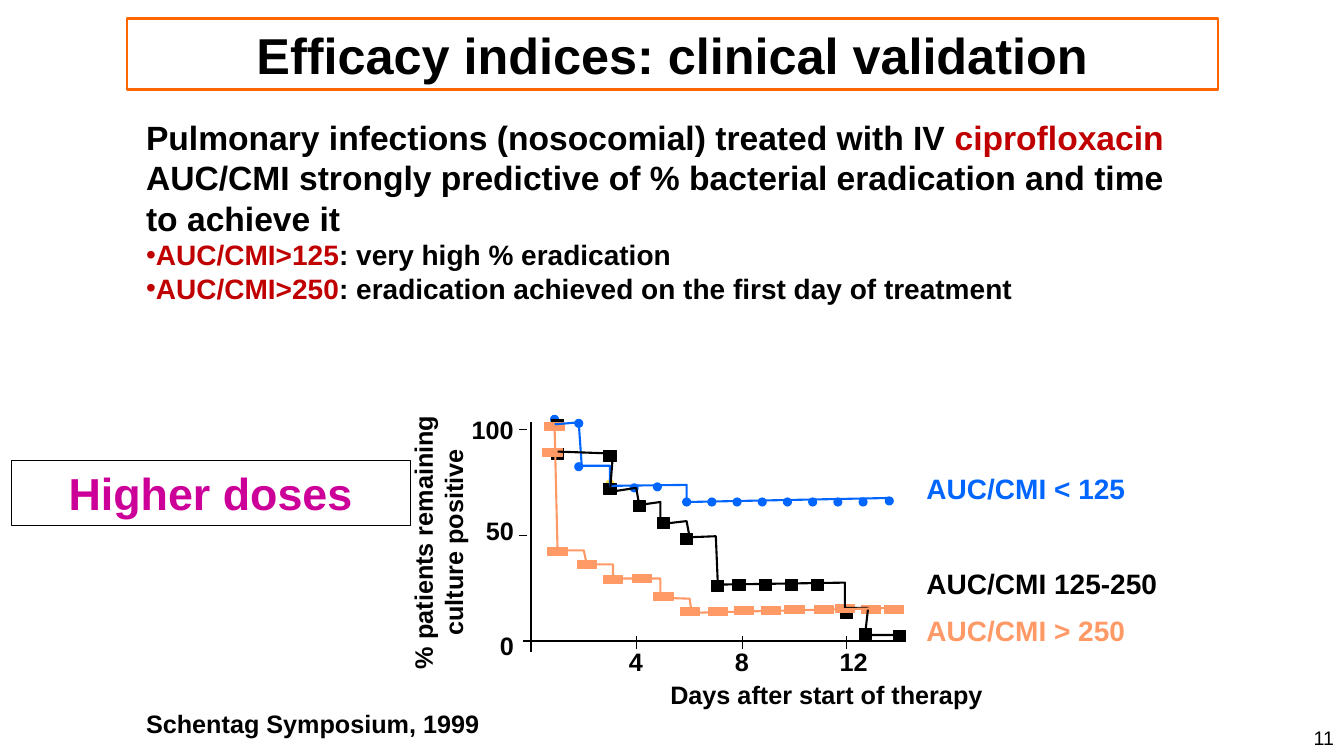
"""Build the slide on clinical validation of efficacy indices."""
from lxml.etree import SubElement
from pptx import Presentation
from pptx.dml.color import RGBColor
from pptx.enum.shapes import MSO_CONNECTOR, MSO_SHAPE
from pptx.enum.text import MSO_ANCHOR, PP_ALIGN
from pptx.oxml.ns import qn
from pptx.util import Pt

PX = 9144
color = RGBColor.from_string
BLACK, WHITE, BLUE, ORANGE = "000000", "FFFFFF", "0066FF", "FF9966"
RED, YELLOW, MAGENTA, FRAME = "C00000", "FBDF53", "CC0099", "FF6600"
LEFT, CENTER, RIGHT = PP_ALIGN.LEFT, PP_ALIGN.CENTER, PP_ALIGN.RIGHT
SQUARE, DOT = MSO_SHAPE.RECTANGLE, MSO_SHAPE.OVAL

AXIS_X, AXIS_Y = 527, 636
PX_PER_DAY, PX_PER_PERCENT = 26.1, 2.1

deck = Presentation()
deck.slide_width, deck.slide_height = 1333 * PX, 750 * PX
page = deck.slides.add_slide(deck.slide_layouts[6])


def plot_point(day, percent):
    """Turn a day and a percentage into px on the page."""
    return round(AXIS_X + day * PX_PER_DAY), round(AXIS_Y - percent * PX_PER_PERCENT)


def add_text(frame, paragraphs, align=LEFT, wrap=False, bold=True):
    """Add a text box; each paragraph is (size, bulleted, [(text, colour), ...])."""
    box = page.shapes.add_textbox(*(value * PX for value in frame))
    box.text_frame.word_wrap = wrap
    for index, (size, bulleted, spans) in enumerate(paragraphs):
        para = box.text_frame.paragraphs[0] if index == 0 else box.text_frame.add_paragraph()
        para.alignment = align
        if bulleted:
            properties = para._p.get_or_add_pPr()
            SubElement(properties, qn("a:buFont"), typeface="Arial")
            SubElement(properties, qn("a:buChar"), char="•")
        for text, ink in spans:
            span = para.add_run()
            span.text = text
            for name, value in {"name": "Arial", "size": Pt(size), "bold": bold}.items():
                setattr(span.font, name, value)
            span.font.color.rgb = color(ink)
    return box


add_text((135, 111, 1059, 273), [
    (24, False, [("Pulmonary infections (nosocomial) treated with IV ", BLACK),
                 ("ciprofloxacin", RED)]),
    (24, False, [("AUC/CMI strongly predictive of % bacterial eradication "
                  "and time to achieve it", BLACK)]),
    (20, True, [("AUC/CMI>125", RED), (": very high % eradication", BLACK)]),
    (20, True, [("AUC/CMI>250", RED),
                (": eradication achieved on the first day of treatment", BLACK)]),
], wrap=True)

axis_lines = [(AXIS_X, 647, AXIS_X, 419, 1.5), (519, AXIS_Y, 899, AXIS_Y, 1.5)]
for day, label_width in [(4, 34), (8, 34), (12, 48)]:
    tick_x, _ = plot_point(day, 0)
    axis_lines.append((tick_x, AXIS_Y - 5, tick_x, AXIS_Y + 8, 0.75))
    add_text((tick_x - 17, 636, label_width, 40), [(18, False, [(str(day), BLACK)])])
for percent, label_top, label_width in [(100, 406, 62), (50, 506, 48), (0, 620, 34)]:
    _, tick_y = plot_point(0, percent)
    if percent:
        axis_lines.append((515, tick_y, 523, tick_y, 0.75))
    add_text((520 - label_width, label_top, label_width, 40),
             [(18, False, [(str(percent), BLACK)])])
for *ends, weight in axis_lines:
    line = page.shapes.add_connector(MSO_CONNECTOR.STRAIGHT, *(value * PX for value in ends))
    line.line.color.rgb = color(BLACK)
    line.line.width = Pt(weight)
    SubElement(line._element.spPr, qn("a:effectLst"))

# Observations are (day, % positive); plateaus are (first day, last day, first %, last %).
low_exposure = {
    "label": "AUC/CMI < 125", "label_top": 463, "label_width": 219,
    "ink": BLUE, "marker": (DOT, 8, 8),
    "observations": [(0.9, 104.8), (1.8, 102.9), (1.8, 82.4), (3.9, 72.4), (4.8, 72.9),
                     *((5.9 + 0.96 * step, 65.7) for step in range(8)), (13.6, 66.2)],
    "plateaus": [(0.9, 1.8, 102.4, 103.3), (1.9, 3, 82.9, 82.9),
                 (3, 5.9, 73.3, 73.8), (5.9, 13.6, 65.7, 67.6)],
}
middle_exposure = {
    "label": "AUC/CMI 125-250", "label_top": 557, "label_width": 251,
    "ink": BLACK, "marker": (SQUARE, 12, 11),
    "observations": [(1, 102.1), (1, 88.8), (3, 87.4), (3, 72.1), (4.1, 64), (5, 55.5),
                     (5.9, 47.9), (7.1, 26), *((day - 0.1, 26.9) for day in (8, 9, 10, 11)),
                     (12, 13.1), (12.7, 3.1), (14, 2.6)],
    "plateaus": [(1, 3.1, 89.5, 88.6), (3, 4, 70.5, 72.4), (4.1, 4.9, 64.3, 65.7),
                 (4.9, 5.9, 55.2, 56.7), (6, 7, 49, 49.5), (7.1, 11.9, 26.7, 27.6),
                 (11.9, 12.8, 15.7, 15.7), (12.7, 14, 2.9, 2.9)],
}
high_exposure = {
    "label": "AUC/CMI > 250", "label_top": 604, "label_width": 227,
    "ink": ORANGE, "marker": (SQUARE, 19, 8),
    "observations": [(0.8, 89), (0.9, 101.4), (1, 42.4), (2.1, 36.2), (3.1, 29), (4.2, 29.5),
                     (5, 21), (6, 13.8), (7.1, 13.8), (8.1, 14.3), (9.1, 14.3), (10, 14.8),
                     (11.1, 14.8), (11.9, 15.2), (12.9, 14.8), (13.8, 14.8)],
    "plateaus": [(0.9, 0.9, 101.9, 101.9), (1, 2, 42.9, 42.9), (2.1, 3.1, 36.2, 36.2),
                 (3.1, 4.9, 29.5, 29.5), (4.9, 6, 20.5, 20), (6.1, 14, 13.3, 15.7)],
}
overlap = {"ink": YELLOW, "marker": (DOT, 8, 8), "observations": [(3, 74.3)]}
exposures = [low_exposure, middle_exposure, high_exposure]

for series in [overlap, *exposures]:
    kind, width, height = series["marker"]
    for observation in series["observations"]:
        x, y = plot_point(*observation)
        corner = round((x - width / 2) * PX), round((y - height / 2) * PX)
        marker = page.shapes.add_shape(kind, *corner, width * PX, height * PX)
        marker.shadow.inherit = False
        marker.fill.solid()
        marker.fill.fore_color.rgb = marker.line.color.rgb = color(series["ink"])
        marker.line.width = Pt(0.75)

for series in exposures:
    corners = []
    for first_day, last_day, first_percent, last_percent in series["plateaus"]:
        corners += [plot_point(first_day, first_percent), plot_point(last_day, last_percent)]
    builder = page.shapes.build_freeform(*corners[0], scale=PX)
    builder.add_line_segments(corners[1:], close=False)
    curve = builder.convert_to_shape()
    curve.shadow.inherit = False
    curve.fill.background()
    curve.line.color.rgb = color(series["ink"])
    curve.line.width = Pt(1.5)
    legend = add_text((909, series["label_top"], series["label_width"], 44),
                      [(20, False, [(series["label"], series["ink"])])])

add_text((655, 669, 330, 40), [(18, False, [("Days after start of therapy", BLACK)])])
add_text((135, 698, 351, 40), [(18, False, [("Schentag Symposium, 1999", BLACK)])])
percent_title = add_text((296, 503, 277, 70), [
    (18, False, [("% patients remaining culture positive", BLACK)])], CENTER, wrap=True)
percent_title.rotation = 270

title = add_text((126, 18, 1082, 71), [
    (36, False, [("Efficacy indices: clinical validation", BLACK)])], CENTER, wrap=True)
title.text_frame.vertical_anchor = MSO_ANCHOR.MIDDLE
doses = add_text((11, 457, 396, 64), [(32, False, [("Higher doses", MAGENTA)])], CENTER)
add_text((989, 715, 344, 35), [(14, False, [("11", BLACK)])], RIGHT, wrap=True, bold=False)

for box in (legend, doses):
    box.fill.solid()
    box.fill.fore_color.rgb = color(WHITE)
for box, ink, weight in [(title, FRAME, 2), (doses, BLACK, 0.75)]:
    box.line.color.rgb = color(ink)
    box.line.width = Pt(weight)

deck.save("out.pptx")
